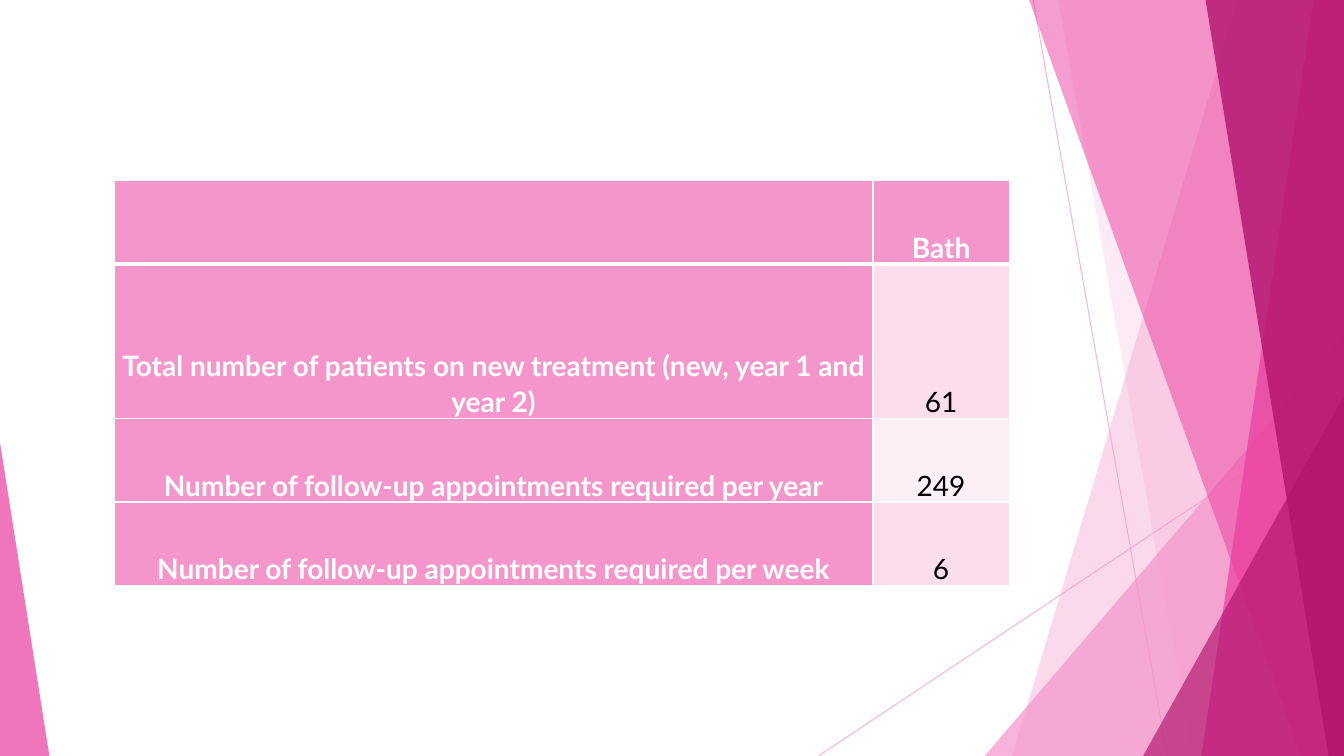
from lxml.etree import SubElement as Sub
from pptx import Presentation
from pptx.dml.color import RGBColor
from pptx.enum.shapes import MSO_CONNECTOR as Conn, MSO_SHAPE as Form
from pptx.enum.text import MSO_ANCHOR as Anchor, PP_ALIGN as Align
from pptx.oxml.ns import qn
from pptx.util import Pt

PINK = RGBColor(0xF4, 0x96, 0xCB)
ROSE = RGBColor(0xEB, 0x3D, 0x9F)
PLUM = RGBColor(0xB2, 0x13, 0x6D)
PALE = RGBColor(0xFB, 0xDD, 0xEC)
MIST = RGBColor(0xFD, 0xEF, 0xF6)
WHITE = RGBColor(0xFF, 0xFF, 0xFF)
BLACK = RGBColor(0, 0, 0)

ROWS = [
    ("", "Bath", PINK),
    ("Total number of patients on new treatment (new, year 1 and year 2)", "61", PALE),
    ("Number of follow-up appointments required per year", "249", MIST),
    ("Number of follow-up appointments required per week", "6", PALE),
]


def fade(node, alpha):
    for color in node.iter(qn("a:srgbClr")):
        Sub(color, qn("a:alpha"), val=str(alpha * 1000))


def paint(shape, color, alpha):
    shape.shadow.inherit = False
    shape.fill.solid()
    shape.fill.fore_color.rgb = color
    shape.line.fill.background()
    fade(shape.fill._xPr, alpha)


def add_line(slide, x1, y1, x2, y2):
    line = slide.shapes.add_connector(Conn.STRAIGHT, Pt(x1), Pt(y1), Pt(x2), Pt(y2))
    line.line.color.rgb = PINK
    line.line.width = Pt(0.75)
    props = line._element.spPr
    fade(props, 70)
    Sub(props, qn("a:effectLst"))


def add_band(slide, top, foot, box, color, alpha):
    x, y, wide, high = box
    right, base = x + wide, y + high
    pen = slide.shapes.build_freeform(Pt(x + top), Pt(y))
    pen.add_line_segments(
        [(Pt(right), Pt(y)), (Pt(right), Pt(base)), (Pt(x + foot), Pt(base))])
    paint(pen.convert_to_shape(), color, alpha)


def add_wedge(slide, box, tip, color, alpha):
    wedge = slide.shapes.add_shape(Form.ISOSCELES_TRIANGLE, *map(Pt, box))
    wedge.adjustments[0] = tip
    paint(wedge, color, alpha)


def add_rays(slide, box):
    x, y, wide, high = box
    right, base = x + wide, y + high

    def corner(left, top, color, alpha):
        area = (x + left, y + top, wide - left, high - top)
        add_wedge(slide, area, 1, color, alpha)

    add_line(slide, x + 158, y, x + 253.8, base)
    add_line(slide, right, y + 290.2, x + 4.6, base)
    add_band(slide, 304.2, 142.9, box, PINK, 36)
    add_band(slide, 176, 271.8, box, PINK, 20)
    corner(123.4, 239.8, PINK, 72)
    add_band(slide, 155.1, 349.5, box, ROSE, 50)
    add_band(slide, 358.2, 278.2, box, ROSE, 70)
    add_band(slide, 281.1, 369, box, PLUM, 80)
    corner(236.5, 283, PLUM, 66)


def set_edges(cell, base):
    props = cell._tc.get_or_add_tcPr()
    for spot, (side, width) in enumerate(
            [("lnL", 1), ("lnR", 1), ("lnT", 1), ("lnB", base)]):
        edge = props.makeelement(qn("a:" + side), {"w": str(Pt(width))})
        fill = Sub(edge, qn("a:solidFill"))
        Sub(fill, qn("a:srgbClr"), val=str(WHITE))
        props.insert(spot, edge)


def fill_cell(cell, text, back, ink, bold):
    cell.fill.solid()
    cell.fill.fore_color.rgb = back
    cell.vertical_anchor = Anchor.BOTTOM
    cell.margin_left = cell.margin_right = Pt(5)
    cell.margin_top = cell.margin_bottom = 0
    if text:
        para = cell.text_frame.paragraphs[0]
        para.alignment = Align.CENTER
        para.line_spacing = 1.07
        run = para.add_run()
        run.text = text
        font = run.font
        font.name = "Lato"
        font.size = Pt(20)
        font.bold = bold
        font.color.rgb = ink


def add_grid(slide, box):
    x, y, wide, high = box
    frame = slide.shapes.add_table(len(ROWS), 2, *map(Pt, box))
    table = frame.table
    side = 97.2
    unit = 59.8
    table.columns[0].width = Pt(wide - side)
    table.columns[1].width = Pt(side)
    for i, (label, value, tint) in enumerate(ROWS):
        table.rows[i].height = Pt(high - 3 * unit if i == 1 else unit)
        head = i == 0
        fill_cell(table.cell(i, 0), label, PINK, WHITE, True)
        fill_cell(table.cell(i, 1), value, tint, WHITE if head else BLACK, head)
        for cell in table.rows[i].cells:
            set_edges(cell, 3 if head else 1)


def main():
    deck = Presentation()
    deck.slide_width = Pt(960)
    deck.slide_height = Pt(540)
    slide = deck.slides.add_slide(deck.slide_layouts[6])
    add_rays(slide, (580, 0, 380, 540))
    add_wedge(slide, (0, 316.1, 35.3, 223.9), 0, ROSE, 70)
    add_grid(slide, (81.4, 128.9, 639.4, 289.6))
    deck.save("out.pptx")


if __name__ == "__main__":
    main()
